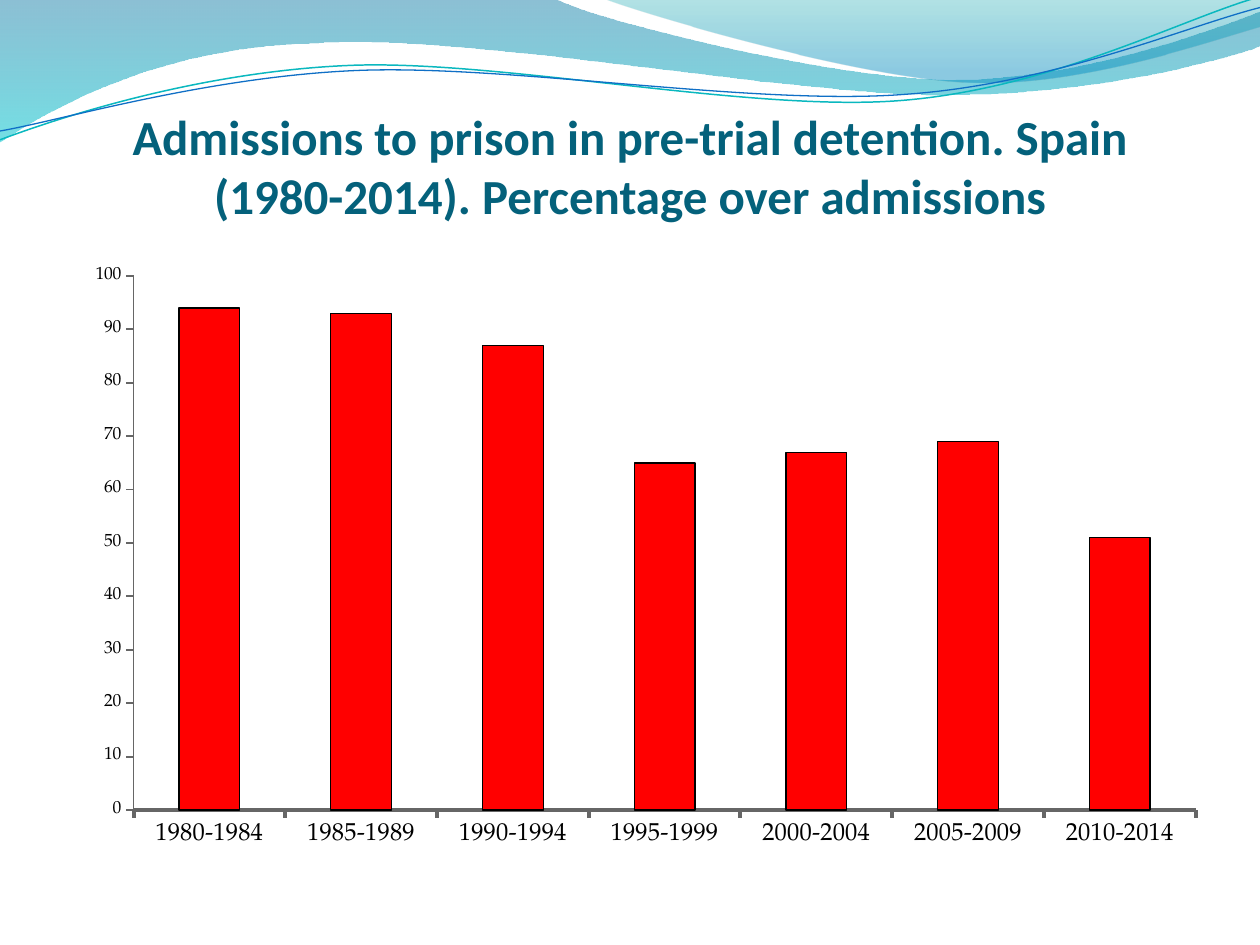
from lxml import etree
from pptx import Presentation
from pptx.chart.data import CategoryChartData
from pptx.dml.color import RGBColor
from pptx.enum import chart as charts, text
from pptx.oxml import parse_xml
from pptx.oxml.ns import nsdecls, qn
from pptx.util import Inches, Pt


def colour(hex_value):
    return RGBColor.from_string(hex_value)


class SlideBuilder:
    title_font = "Calibri"
    title_colour = "04617B"
    chart_font = "TeX Gyre Pagella"
    axis_colour = "666666"

    def __init__(self, page):
        self.page = page

    def outline(self, start, segments, close):
        """Add a path of lines (2 numbers) and cubic Bezier curves (6 numbers)."""
        corners = [(Inches(x), Inches(y)) for segment in segments
                   for x, y in zip(segment[::2], segment[1::2])]
        builder = self.page.shapes.build_freeform(*map(Inches, start), scale=1.0)
        builder.add_line_segments(corners, close=close)
        shape = builder.convert_to_shape()
        shape.shadow.inherit = False

        lines = iter(list(shape._element.spPr.iter(qn("a:lnTo"))))
        for segment in segments:
            first = next(lines)
            if len(segment) == 6:
                first.tag = qn("a:cubicBezTo")
                for _ in range(2):
                    control = next(lines)
                    first.append(control[0])
                    control.getparent().remove(control)
        return shape

    def wave(self, start, segments, stops):
        """Add a closed shape fading downwards; stops are (position, colour, opacity %)."""
        shape = self.outline(start, segments, close=True)
        shape.line.fill.background()
        fill = shape.fill
        fill.gradient()
        fill.gradient_angle = 270
        for stop, (position, hex_value, _) in zip(fill.gradient_stops, stops):
            stop.position = position
            stop.color.rgb = colour(hex_value)
        for node, (_, _, opacity) in zip(shape._element.spPr.iter(qn("a:srgbClr")), stops):
            etree.SubElement(node, qn("a:alpha")).set("val", str(opacity * 1000))

    def ribbon(self, start, segments, hex_value, width):
        shape = self.outline(start, segments, close=False)
        shape.fill.background()
        shape.line.color.rgb = colour(hex_value)
        shape.line.width = Pt(width)

    def title(self, words, left, top, width, height):
        box = self.page.shapes.add_textbox(*map(Inches, (left, top, width, height)))
        frame = box.text_frame
        frame.word_wrap = True
        frame.vertical_anchor = text.MSO_ANCHOR.BOTTOM
        frame.margin_left = frame.margin_right = frame.margin_bottom = 0
        frame.margin_top = Inches(0.05)
        para = frame.paragraphs[0]
        para.alignment = text.PP_ALIGN.CENTER
        span = para.add_run()
        span.text = words
        span.font.name = self.title_font
        span.font.size = Pt(28)
        span.font.bold = True
        span.font.color.rgb = colour(self.title_colour)

    def axis(self, axis, size, width):
        axis.has_major_gridlines = False
        axis.major_tick_mark = charts.XL_TICK_MARK.OUTSIDE
        axis.minor_tick_mark = charts.XL_TICK_MARK.NONE
        axis.tick_labels.font.size = Pt(size)
        axis.format.line.color.rgb = colour(self.axis_colour)
        axis.format.line.width = Pt(width)

    def column_chart(self, values, left, top, width, height, plot_area):
        """Add the columns; plot_area is x, y, w, h in inches inside the chart."""
        data = CategoryChartData(number_format="0")
        data.categories = list(values)
        data.add_series("Series 1", list(values.values()))
        chart = self.page.shapes.add_chart(
            charts.XL_CHART_TYPE.COLUMN_CLUSTERED,
            *map(Inches, (left, top, width, height)), data).chart
        chart.has_legend = chart.has_title = False
        chart.font.name = self.chart_font
        chart.font.size = Pt(10)
        chart.font.color.rgb = colour("000000")
        self.axis(chart.category_axis, size=14, width=2.25)
        self.axis(chart.value_axis, size=10, width=1)
        chart.value_axis.minimum_scale = 0
        chart.value_axis.maximum_scale = 100
        chart.value_axis.major_unit = 10

        plot = chart.plots[0]
        plot.gap_width = 150
        plot.vary_by_categories = False
        bars = plot.series[0]
        bars.format.fill.solid()
        bars.format.fill.fore_color.rgb = colour("FF0000")
        bars.format.line.color.rgb = colour("000000")
        bars.format.line.width = Pt(0.75)
        self.place_plot(chart, [length / whole for length, whole
                                in zip(plot_area, (width, height) * 2)])

    def place_plot(self, chart, fractions):
        modes = "".join(f'<c:{name}Mode val="edge"/>' for name in "xy")
        sizes = "".join(f'<c:{name} val="{value:.4f}"/>'
                        for name, value in zip("xywh", fractions))
        layout = parse_xml(f'<c:layout {nsdecls("c")}><c:manualLayout>'
                           f'<c:layoutTarget val="inner"/>{modes}{sizes}'
                           '</c:manualLayout></c:layout>')
        area = chart._chartSpace.chart.plotArea
        for old in area.findall(qn("c:layout")):
            area.remove(old)
        area.insert(0, layout)


def main():
    deck = Presentation()
    deck.slide_width, deck.slide_height = Inches(10), Inches(7.5)
    slide = SlideBuilder(deck.slides.add_slide(deck.slide_layouts[6]))

    slide.wave((0, 0), [(4.4, -0.01), (4.76, 0.17, 6.64, 0.63, 7.58, 0.63),
                        (8.53, 0.63, 9.58, 0.26, 10, 0.09), (10.01, 0.36),
                        (9.83, 0.44, 8.7, 0.76, 7.46, 0.75),
                        (6.22, 0.75, 3.82, 0.28, 2.57, 0.34),
                        (1.29, 0.36, 0.46, 0.83, -0.01, 1.13)],
               [(0, "0074A1", 45), (1, "00C6CF", 55)])
    slide.wave((4.79, -0.01), [(5.09, 0.11, 6.82, 0.62, 7.69, 0.65),
                               (8.56, 0.69, 9.61, 0.32, 10, 0.21), (10, 0)],
               [(0, "00A1A9", 30), (0.8, "008BBF", 45)])
    slide.ribbon((0, 1.11), [(0.48, 0.93, 1.58, 0.57, 2.77, 0.52),
                             (3.95, 0.47, 5.93, 0.89, 7.13, 0.8),
                             (8.33, 0.71, 9.38, 0.15, 9.98, -0.02)], "0AB8BF", 0.85)
    slide.ribbon((0, 1.04), [(0.47, 0.96, 1.64, 0.61, 2.83, 0.56),
                             (4.03, 0.51, 5.97, 0.84, 7.17, 0.75),
                             (8.36, 0.67, 9.41, 0.21, 10, 0.06)], "0F6FC6", 0.75)

    slide.title("Admissions to prison in pre-trial detention. Spain (1980-2014). "
                "Percentage over admissions", 0.5, 0.44, 9, 1.34)
    shares = (94, 93, 87, 65, 67, 69, 51)
    periods = (f"{year}-{year + 4}" for year in range(1980, 2015, 5))
    slide.column_chart(dict(zip(periods, shares)), 0.51, 2.1, 9, 5.12,
                       plot_area=(0.55, 0.09, 8.43, 4.24))
    deck.save("out.pptx")


if __name__ == "__main__":
    main()
